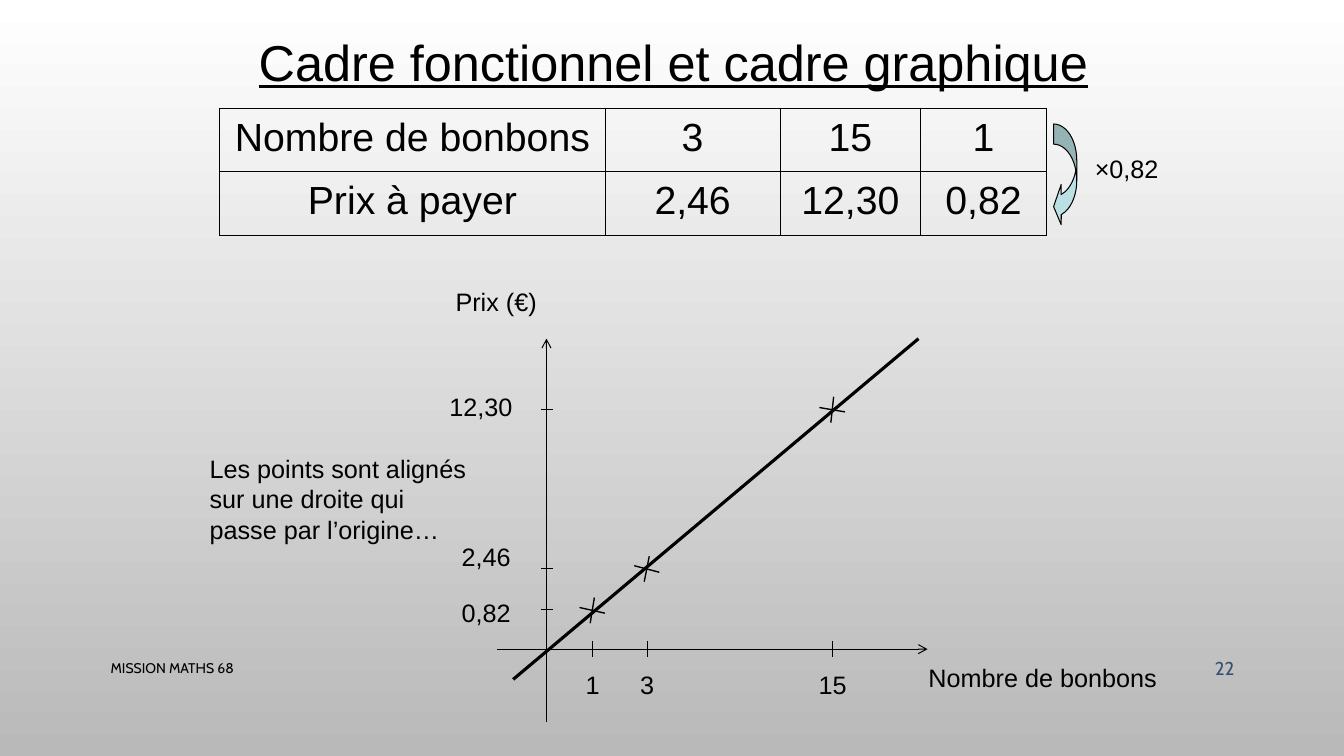
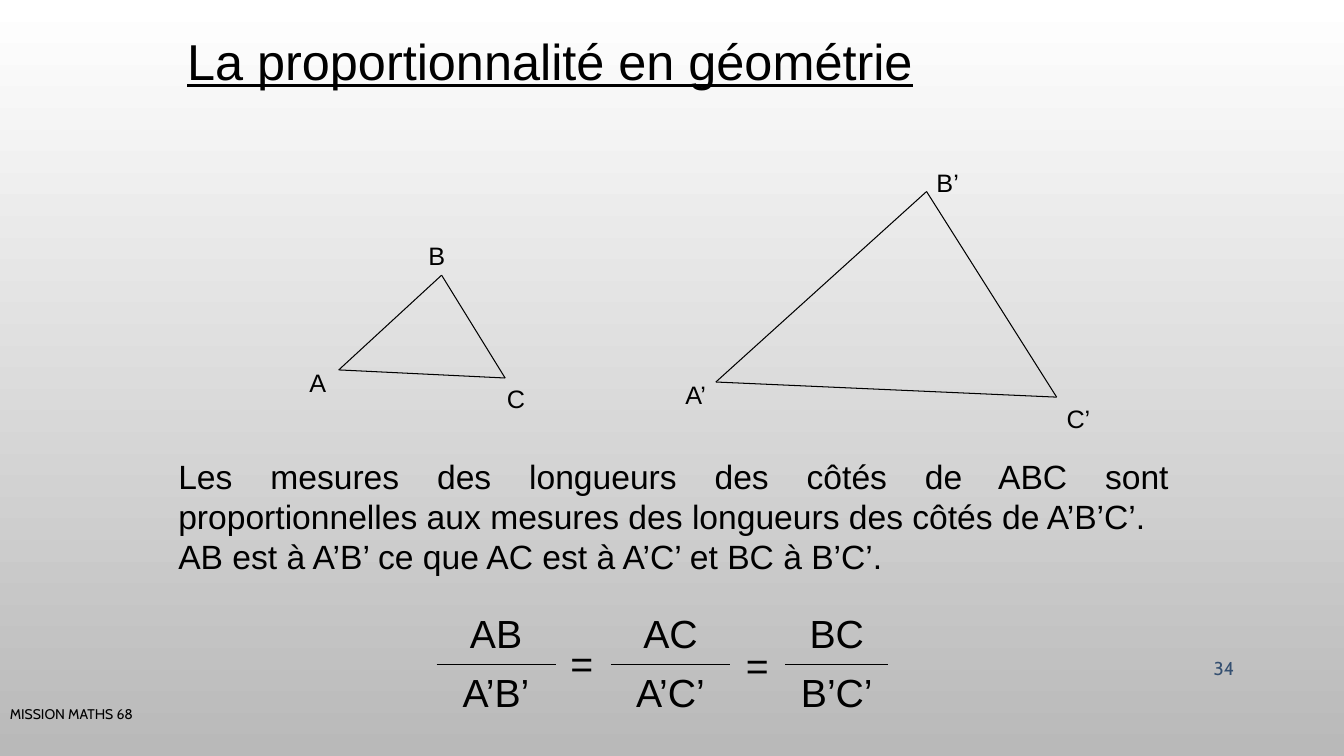
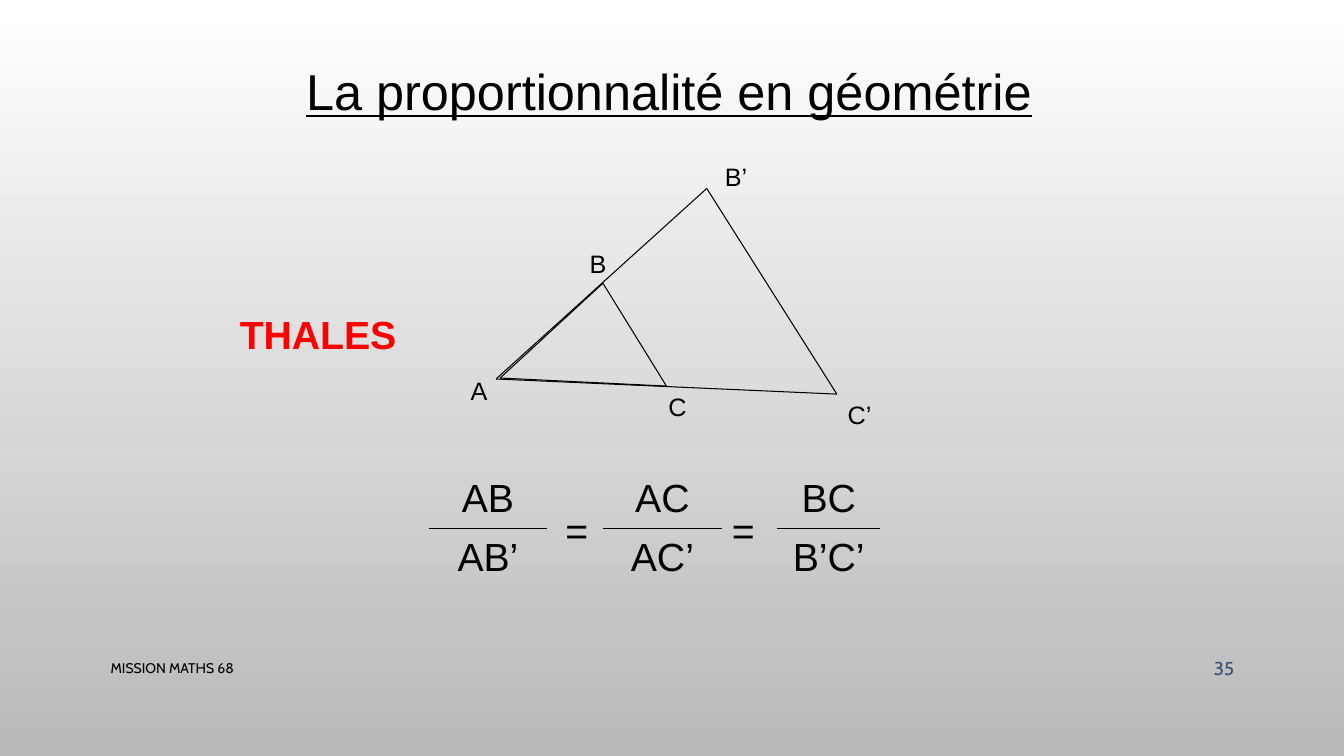
from dataclasses import dataclass
from typing import Any, Optional

from lxml import etree
from pptx import Presentation
from pptx import util as u
from pptx.dml import color
from pptx.enum import shapes, text
from pptx.oxml import ns

LEFT, CENTER = text.PP_ALIGN.LEFT, text.PP_ALIGN.CENTER
RIGHT, JUSTIFY = text.PP_ALIGN.RIGHT, text.PP_ALIGN.JUSTIFY


# Theme: colours, fonts, type sizes, line widths
@dataclass(frozen=True)
class Theme:
    ink: str = "000000"
    accent: str = "FF0000"
    page_number: str = "355071"
    arrow: str = "BBE0E3"
    marker: str = "00B8FF"
    background: tuple[str, str] = ("FFFFFF", "B9B9B9")
    body_font: str = "Arial"
    footer_font: str = "Cabin"
    title: float = 36
    large: float = 28
    body: float = 24
    label: float = 18
    number: float = 13.3
    footer: float = 10
    thin: float = 0.75
    thick: float = 2.25
    cell_inner: float = 0.23
    cell_outer: float = 0.5


THEME = Theme()
NO_STYLE_TABLE = "{2D5ABB26-0587-4C30-8999-92F81FD0307C}"


@dataclass(frozen=True)
class Box:
    left: float
    top: float
    width: float
    height: float

    def lengths(self) -> tuple[int, ...]:
        return tuple(u.Inches(v) for v in (self.left, self.top, self.width, self.height))


@dataclass(frozen=True)
class Label:
    text: str
    x: float
    y: float


@dataclass(frozen=True)
class DataPoint:
    quantity: str
    price: str
    x: float
    y: float
    rotation: float
    price_label: tuple[float, float]


@dataclass(frozen=True)
class Triangle:
    """Corners and labels are offsets from the vertex A."""
    x: float
    y: float
    corners: tuple[tuple[float, float], ...]
    labels: tuple[Label, ...]


# Text
def format_paragraph(paragraph: Any, size: float, rgb: str = THEME.ink,
                     align: Any = LEFT, **formats: Any) -> None:
    paragraph.alignment = align
    values = {"size": u.Pt(size), "name": THEME.body_font, **formats}
    for name, value in values.items():
        setattr(paragraph.font, name, value)
    paragraph.font.color.rgb = color.RGBColor.from_string(rgb)


def add_text(slide: Any, box: Box, content: str, size: float = THEME.label,
             middle: bool = False, **formats: Any) -> None:
    frame = slide.shapes.add_textbox(*box.lengths()).text_frame
    frame.word_wrap = True
    if middle:
        frame.vertical_anchor = text.MSO_ANCHOR.MIDDLE
    frame.text = content
    for paragraph in frame.paragraphs:
        format_paragraph(paragraph, size, **formats)


def add_title(slide: Any, box: Box, content: str) -> None:
    add_text(slide, box, content, THEME.title, middle=True, align=CENTER, underline=True)


def add_footer(slide: Any, number: int, left: float = 1, top: float = 6.43) -> None:
    add_text(slide, Box(left, top, 7.3, 0.4), "MISSION MATHS 68", THEME.footer,
             middle=True, name=THEME.footer_font)
    add_text(slide, Box(11.5, 6.43, 0.84, 0.4), str(number), THEME.number, middle=True,
             rgb=THEME.page_number, align=RIGHT, name=THEME.footer_font)


# Lines and shapes
def add_line(slide: Any, start: tuple[float, float], end: tuple[float, float],
             width: float = THEME.thin, arrow: bool = False) -> None:
    connector = slide.shapes.add_connector(
        shapes.MSO_CONNECTOR.STRAIGHT, *(u.Inches(v) for v in (*start, *end)))
    connector.line.color.rgb = color.RGBColor.from_string(THEME.ink)
    connector.line.width = u.Pt(width)
    properties = connector._element.spPr
    if arrow:
        outline = properties.find(ns.qn("a:ln"))
        etree.SubElement(outline, ns.qn("a:tailEnd"), type="arrow")
    etree.SubElement(properties, ns.qn("a:effectLst"))


def add_preset(slide: Any, kind: Any, box: Box, fill: str,
               adjustments: tuple[float, ...], rotation: float = 0) -> None:
    shape = slide.shapes.add_shape(kind, *box.lengths())
    shape.shadow.inherit = False
    shape.rotation = rotation
    shape.fill.solid()
    shape.fill.fore_color.rgb = color.RGBColor.from_string(fill)
    shape.line.color.rgb = color.RGBColor.from_string(THEME.ink)
    shape.line.width = u.Pt(THEME.thin)
    for index, value in enumerate(adjustments):
        shape.adjustments[index] = value


# Tables
def set_border(cell: Any, side: str, width: Optional[float]) -> None:
    line = etree.SubElement(cell._tc.get_or_add_tcPr(), ns.qn(f"a:ln{side}"))
    if width is None:
        etree.SubElement(line, ns.qn("a:noFill"))
        return
    line.set("w", str(u.Pt(width)))
    fill = etree.SubElement(line, ns.qn("a:solidFill"))
    etree.SubElement(fill, ns.qn("a:srgbClr"), val=THEME.ink)


def add_table(slide: Any, left: float, top: float, columns: list[float],
              row_height: float, rows: list[list[str]], grid: bool) -> None:
    """Draw a full grid, or only fraction bars between the two rows."""
    box = Box(left, top, sum(columns), row_height * len(rows))
    table = slide.shapes.add_table(len(rows), len(columns), *box.lengths()).table
    table.first_row = table.horz_banding = False
    table._tbl.tblPr.find(ns.qn("a:tableStyleId")).text = NO_STYLE_TABLE
    for column, width in zip(table.columns, columns):
        column.width = u.Inches(width)
    for r, row in enumerate(rows):
        table.rows[r].height = u.Inches(row_height)
        for c, content in enumerate(row):
            cell = table.cell(r, c)
            edges = {"L": c == 0, "R": c == len(columns) - 1,
                     "T": r == 0, "B": r == len(rows) - 1}
            for side, outer in edges.items():
                if grid:
                    width = THEME.cell_outer if outer else THEME.cell_inner
                else:
                    bar = content and side in "TB" and not outer
                    width = THEME.cell_inner if bar else None
                set_border(cell, side, width)
            cell.fill.background()
            cell.margin_top = u.Inches(0.13)
            if content:
                cell.text = content
                paragraph = cell.text_frame.paragraphs[0]
                paragraph.line_spacing = 0.87
                format_paragraph(paragraph, THEME.large, align=CENTER)


def add_ratios(slide: Any, left: float, top: float, numerators: list[str],
               denominators: list[str], equals: list[tuple[float, float]]) -> None:
    rows = [[first, "", second, "", third]
            for first, second, third in (numerators, denominators)]
    add_table(slide, left, top, [1.18, 0.55, 1.18, 0.55, 1.02], 0.59, rows, grid=False)
    for x, y in equals:
        add_text(slide, Box(x, y, 0.43, 0.57), "=", THEME.large)


# Geometry
SMALL_CORNERS = ((0, 0), (1.02, -0.94), (1.65, 0.08))
LARGE_CORNERS = ((0, 0), (2.09, -1.89), (3.38, 0.15))
SMALL_LABELS = (Label("A", -0.39, -0.08), Label("B", 0.79, -1.34), Label("C", 1.57, 0.08))


def add_triangle(slide: Any, triangle: Triangle) -> None:
    a, b, c = [(triangle.x + dx, triangle.y + dy) for dx, dy in triangle.corners]
    for start, end in ((a, b), (b, c), (a, c)):
        add_line(slide, start, end)
    for label in triangle.labels:
        width = 0.38 if len(label.text) == 1 else 0.44
        box = Box(triangle.x + label.x, triangle.y + label.y, width, 0.41)
        add_text(slide, box, label.text)


# Slides
def build_graph_slide(slide: Any) -> None:
    add_title(slide, Box(2.18, 0.13, 9, 0.95), "Cadre fonctionnel et cadre graphique")
    add_table(slide, 2.18, 1.07, [3.82, 1.74, 1.39, 1.25], 0.63,
              [["Nombre de bonbons", "3", "15", "1"],
               ["Prix à payer", "2,46", "12,30", "0,82"]], grid=True)
    add_line(slide, (5.09, 6.74), (9.11, 3.36), THEME.thick)
    add_preset(slide, shapes.MSO_SHAPE.CURVED_LEFT_ARROW, Box(10.45, 1.23, 0.23, 1.02),
               THEME.arrow, (0.87, 1.74, 0.33))
    for box, content in (
        (Box(10.76, 1.47, 1.06, 0.41), "×0,82"),
        (Box(9.11, 6.52, 2.71, 0.41), "Nombre de bonbons"),
        (Box(1.98, 4.45, 2.81, 1.01),
         "Les points sont alignés sur une droite qui passe par l’origine…"),
        (Box(4.42, 2.79, 1.46, 0.41), "Prix (€)"),
    ):
        add_text(slide, box, content)

    # Axes, then ticks, labels and a cross for each point
    axis_x, axis_y = 5.42, 6.44
    add_line(slide, (axis_x, 7.16), (axis_x, 3.36), arrow=True)
    add_line(slide, (4.93, axis_y), (9.2, axis_y), arrow=True)
    for point in (
        DataPoint("1", "0,82", 5.88, 6.05, 325.9, (4.48, 5.88)),
        DataPoint("3", "2,46", 6.42, 5.64, 327.9, (4.48, 5.32)),
        DataPoint("15", "12,30", 8.26, 4.06, 322.9, (4.36, 3.83)),
    ):
        add_line(slide, (point.x, axis_y - 0.08), (point.x, axis_y + 0.08))
        add_line(slide, (axis_x - 0.05, point.y), (axis_x + 0.06, point.y))
        width = 0.2 + 0.14 * len(point.quantity)
        add_text(slide, Box(point.x - width / 2, 6.59, width, 0.41), point.quantity)
        add_text(slide, Box(*point.price_label, 1, 0.41), point.price)
        add_preset(slide, shapes.MSO_SHAPE.MATH_MULTIPLY,
                   Box(point.x - 0.17, point.y - 0.17, 0.33, 0.35),
                   THEME.marker, (0.01,), point.rotation)
    add_footer(slide, 22)


def build_similar_slide(slide: Any) -> None:
    add_triangle(slide, Triangle(3.36, 3.67, SMALL_CORNERS, SMALL_LABELS))
    add_triangle(slide, Triangle(7.1, 3.79, LARGE_CORNERS, (
        Label("A’", -0.4, -0.08), Label("B’", 2.09, -2.18), Label("C’", 3.38, 0.16))))
    add_title(slide, Box(0.61, 0.22, 9.69, 0.75), "La proportionnalité en géométrie")
    add_text(slide, Box(1.67, 4.47, 10.02, 1.32),
             "Les mesures des longueurs des côtés de ABC sont proportionnelles "
             "aux mesures des longueurs des côtés de A’B’C’.\n"
             "AB est à A’B’ ce que AC est à A’C’ et BC à B’C’.",
             THEME.body, align=JUSTIFY)
    add_ratios(slide, 4.33, 6, ["AB", "AC", "BC"], ["A’B’", "A’C’", "B’C’"],
               [(5.56, 6.29), (7.3, 6.31)])
    add_footer(slide, 34, left=0, top=6.88)


def build_thales_slide(slide: Any) -> None:
    add_triangle(slide, Triangle(4.96, 3.75, SMALL_CORNERS, SMALL_LABELS))
    add_triangle(slide, Triangle(4.92, 3.76, LARGE_CORNERS, (
        Label("B’", 2.17, -2.21), Label("C’", 3.39, 0.15))))
    add_title(slide, Box(2.89, 0.52, 7.49, 0.75), "La proportionnalité en géométrie")
    add_ratios(slide, 4.25, 4.65, ["AB", "AC", "BC"], ["AB’", "AC’", "B’C’"],
               [(5.51, 4.97), (7.16, 4.97)])
    add_text(slide, Box(2.28, 3.03, 1.97, 0.57), "THALES", THEME.large,
             rgb=THEME.accent, bold=True)
    add_footer(slide, 35)


def main() -> None:
    presentation = Presentation()
    presentation.slide_width = u.Inches(13.33)
    presentation.slide_height = u.Inches(7.5)

    # Shared background, from top to bottom
    fill = presentation.slide_master.background.fill
    fill.gradient()
    fill.gradient_angle = 270
    for stop, rgb in zip(fill.gradient_stops, THEME.background):
        stop.color.rgb = color.RGBColor.from_string(rgb)

    for build in (build_graph_slide, build_similar_slide, build_thales_slide):
        build(presentation.slides.add_slide(presentation.slide_layouts[6]))
    presentation.save("out.pptx")


if __name__ == "__main__":
    main()
